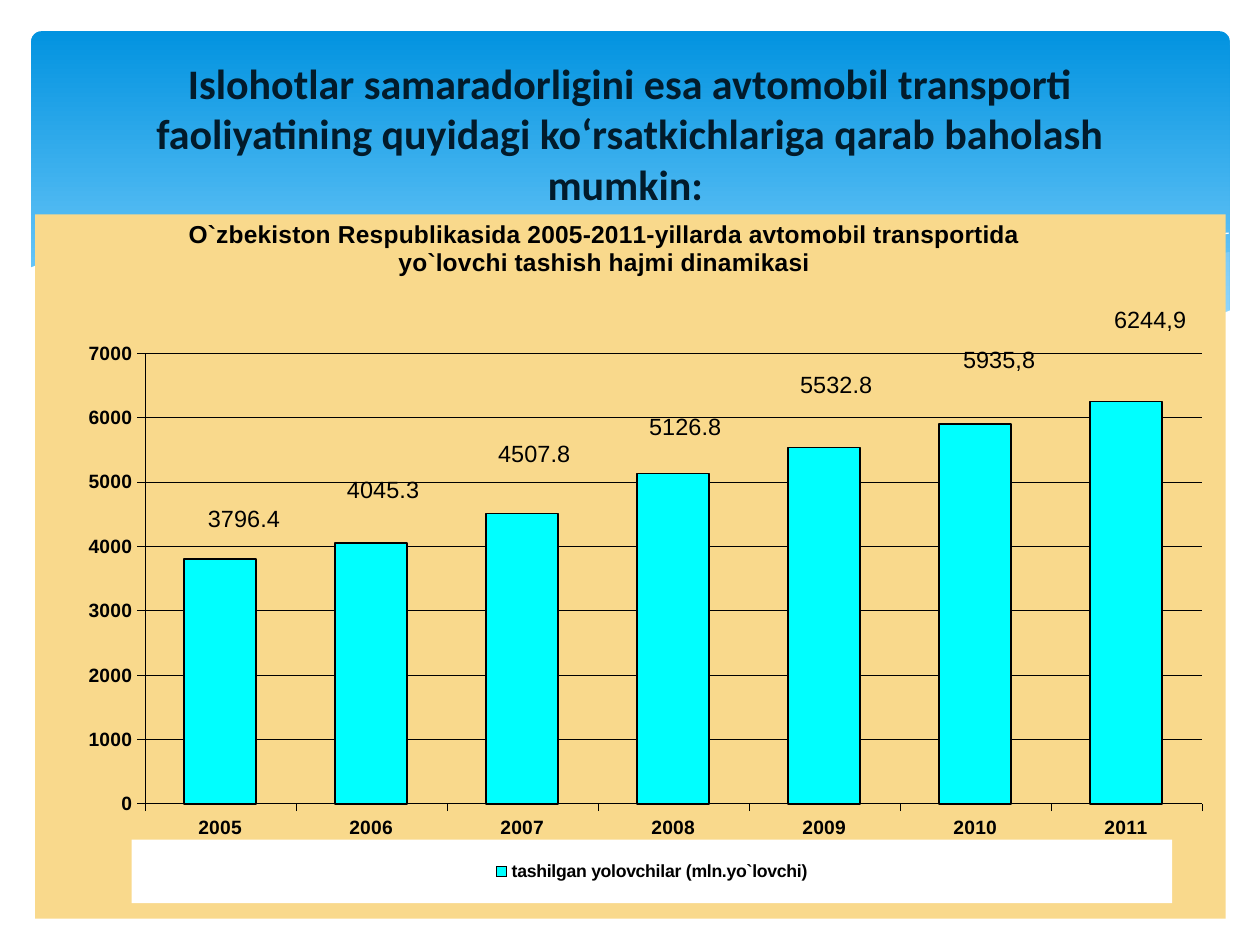
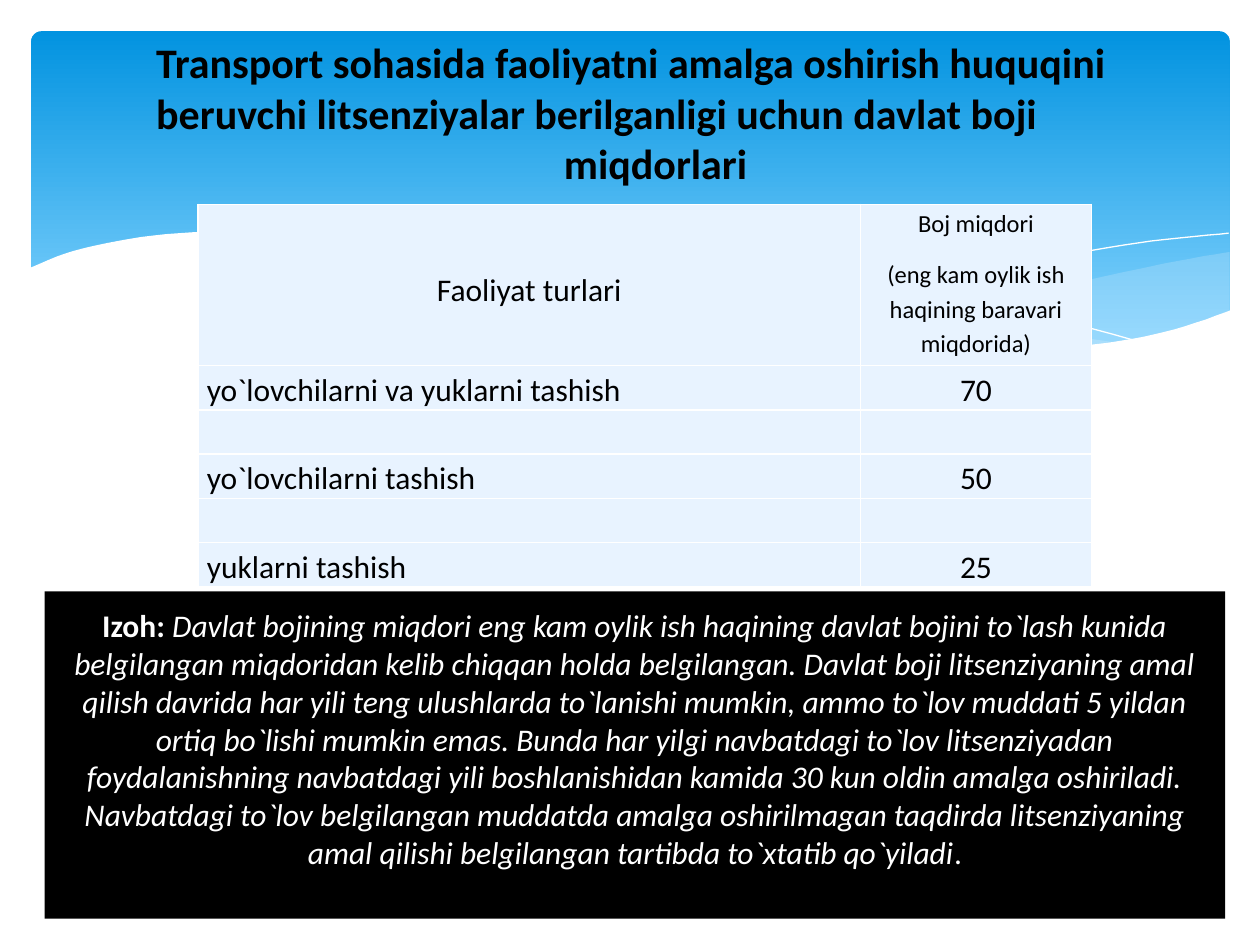
from dataclasses import dataclass
from typing import Any, NamedTuple

from pptx import Presentation
from pptx import util as u
from pptx.chart.data import CategoryChartData
from pptx.dml.color import RGBColor
from pptx.enum import chart as charts
from pptx.enum import shapes, text
from pptx.oxml import parse_xml
from pptx.oxml.ns import nsdecls, qn

SKY_TOP = RGBColor(0x02, 0x93, 0xE0)
SKY_BOTTOM = RGBColor(0x83, 0xD3, 0xFE)
MIST = RGBColor(0xC6, 0xE7, 0xFC)
WHITE = RGBColor(0xFF, 0xFF, 0xFF)
BLACK = RGBColor(0, 0, 0)
NAVY = RGBColor(0x02, 0x1B, 0x2B)
SAND = RGBColor(0xF9, 0xD9, 0x8C)
CYAN = RGBColor(0, 0xFF, 0xFF)
ICE = RGBColor(0xE8, 0xF3, 0xFF)

HEADING = {"name": "Calibri", "size": u.Pt(24), "bold": True}
BODY = {"name": "Calibri", "size": u.Pt(18), "bold": False}
CHART_FONT = {"name": "Arial", "bold": True}
POINT_FONT = {"name": "Arial", "size": u.Pt(13.4), "bold": False}

Curve = tuple[tuple[int, int], ...]


class Box(NamedTuple):
    left: float
    top: float
    width: float
    height: float

    def lengths(self) -> tuple:
        return tuple(u.Cm(value) for value in self)


@dataclass(frozen=True)
class Swoosh:
    curves: tuple[Curve, ...]
    filled: RGBColor | None = None
    opacity: int = 100


@dataclass(frozen=True)
class Bar:
    year: str
    value: float
    shift_x: float
    shift_y: float
    label: str = ""


SWOOSHES = (
    Swoosh((((2479, 508), (2375, 526), (2187, 566), (1979, 615), (1793, 653), (1679, 673)),
            ((1679, 673), (1791, 688), (1923, 701), (2068, 706), (2215, 696), (2339, 673),
             (2479, 627))), MIST, 29),
    Swoosh((((2268, 693), (2050, 660), (1793, 610), (1598, 564), (1410, 521), (1242, 493),
             (1067, 475), (917, 470), (726, 485)),
            ((726, 485), (919, 516), (1140, 564), (1346, 610), (1570, 655), (1765, 686),
             (1963, 704), (2129, 706), (2268, 693))), MIST, 40),
    Swoosh((((785, 495), (874, 483), (1019, 475), (1191, 480), (1412, 500), (1615, 528),
             (1847, 574), (2111, 638), (2304, 691)),)),
    Swoosh((((1557, 653), (1765, 597), (1971, 549), (2200, 505), (2347, 483), (2477, 470)),)),
    Swoosh((((2482, 625), (2388, 658), (2283, 683), (2159, 699), (2055, 704), (1933, 699),
             (1748, 681), (1532, 645), (1278, 592), (1062, 541), (864, 500), (688, 478),
             (490, 467), (335, 472), (216, 490), (132, 511), (58, 541)),
            ((58, 836), (2482, 836))), WHITE),
)

BARS = (
    Bar("2005", 3796.4, 0.02, -0.23),
    Bar("2006", 4045.3, 0.01, -0.26),
    Bar("2007", 4507.8, 0.01, -0.29),
    Bar("2008", 5126.8, 0.01, -0.3),
    Bar("2009", 5532.8, 0.01, -0.34),
    Bar("2010", 5899.3, 0.02, -0.36, "5935,8"),
    Bar("2011", 6244.9, 0.02, -0.4, "6244,9"),
)

FEES = (
    ("Faoliyat turlari", "Boj miqdori\n(eng kam oylik ish haqining baravari miqdorida)"),
    ("yo`lovchilarni va yuklarni tashish", "70"),
    ("", ""),
    ("yo`lovchilarni tashish", "50"),
    ("", ""),
    ("yuklarni tashish", "25"),
)

NOTE = (
    "Davlat bojining miqdori eng kam oylik ish haqining davlat bojini to`lash kunida "
    "belgilangan miqdoridan kelib chiqqan holda belgilangan. Davlat boji litsenziyaning amal "
    "qilish davrida har yili teng ulushlarda to`lanishi mumkin, ammo to`lov muddati 5 yildan "
    "ortiq bo`lishi mumkin emas. Bunda har yilgi navbatdagi to`lov litsenziyadan "
    "foydalanishning navbatdagi yili boshlanishidan kamida 30 kun oldin amalga oshiriladi. "
    "Navbatdagi to`lov belgilangan muddatda amalga oshirilmagan taqdirda litsenziyaning "
    "amal qilishi belgilangan tartibda to`xtatib qo`yiladi"
)


def assign(target: Any, values: dict) -> None:
    for name, value in values.items():
        setattr(target, name, value)


def style(font: Any, color: RGBColor, values: dict) -> None:
    assign(font, values)
    font.color.rgb = color


def paint(fill: Any, color: RGBColor) -> None:
    fill.solid()
    fill.fore_color.rgb = color


def outline(line: Any, color: RGBColor, points: float) -> None:
    line.color.rgb = color
    line.width = u.Pt(points)


def write(para: Any, words: str, color: RGBColor, values: dict) -> None:
    span = para.add_run()
    span.text = words
    style(span.font, color, values)


def smooth(nodes: Curve, steps: int = 5) -> list[tuple[int, int]]:
    padded = (nodes[0], *nodes, nodes[-1])
    points = [nodes[0]]
    for a, b, c, d in zip(padded, padded[1:], padded[2:], padded[3:]):
        for step in range(1, steps + 1):
            t = step / steps
            points.append(tuple(
                round(q + t / 2 * (r - p + t * (2 * p - 5 * q + 4 * r - s
                                               + t * (3 * q - p - 3 * r + s))))
                for p, q, r, s in zip(a, b, c, d)))
    return points


def draw_swoosh(page: Any, swoosh: Swoosh) -> Any:
    points = [point for curve in swoosh.curves for point in smooth(curve)]
    builder = page.shapes.build_freeform(*points[0], scale=u.Cm(0.01))
    builder.add_line_segments(points[1:], close=swoosh.filled is not None)
    shape = builder.convert_to_shape()
    if swoosh.filled is None:
        shape.fill.background()
        outline(shape.line, WHITE, 0)
        return shape
    paint(shape.fill, swoosh.filled)
    shape.line.fill.background()
    if swoosh.opacity < 100:
        tint = next(shape.element.iter(qn("a:srgbClr")))
        tint.append(parse_xml(f'<a:alpha {nsdecls("a")} val="{swoosh.opacity * 1000}"/>'))
    return shape


def draw_sky(page: Any) -> Any:
    sky = page.shapes.add_shape(shapes.MSO_SHAPE.ROUNDED_RECTANGLE,
                                *Box(0.63, 0.63, 24.16, 6.86).lengths())
    sky.adjustments[0] = 0.03
    sky.fill.gradient()
    sky.fill.gradient_angle = 270
    for stop, color, position in zip(sky.fill.gradient_stops, (SKY_TOP, SKY_BOTTOM), (0, 0.9)):
        stop.color.rgb = color
        stop.position = position
    sky.line.fill.background()
    return sky


def decorate_layout(page: Any) -> None:
    tree = page.slide_layout.shapes.element
    art = [draw_sky(page)] + [draw_swoosh(page, swoosh) for swoosh in SWOOSHES]
    for index, shape in enumerate(art):
        shape.shadow.inherit = False
        shape.element.nvSpPr.cNvPr.set("id", str(100 + index))
        tree.insert(2 + index, shape.element)


def place_title(page: Any, box: Box) -> Any:
    title = page.shapes.title
    assign(title, dict(zip(("left", "top", "width", "height"), box.lengths())))
    assign(title.text_frame, {"word_wrap": True, "auto_size": text.MSO_AUTO_SIZE.NONE,
                              "vertical_anchor": text.MSO_ANCHOR.MIDDLE})
    title.text_frame.paragraphs[0].alignment = text.PP_ALIGN.CENTER
    return title


def set_layout(parent: Any, index: int, inner: bool = False, **values: float) -> None:
    for old in parent.findall(qn("c:layout")):
        parent.remove(old)
    parts = '<c:layoutTarget val="inner"/>' if inner else ""
    if not parent.tag.endswith("dLbl"):
        parts += '<c:xMode val="edge"/><c:yMode val="edge"/>'
    parts += "".join(f'<c:{name} val="{value}"/>' for name, value in values.items())
    parent.insert(index, parse_xml(
        f'<c:layout {nsdecls("c")}><c:manualLayout>{parts}</c:manualLayout></c:layout>'))


def surface(color: RGBColor | None) -> Any:
    fill = (f'<a:solidFill><a:srgbClr val="{color}"/></a:solidFill>'
            if color is not None else "<a:noFill/>")
    return parse_xml(f'<c:spPr {nsdecls("c", "a")}>{fill}<a:ln><a:noFill/></a:ln></c:spPr>')


def hide_leader_lines(root: Any) -> None:
    labels = next(root.iter(qn("c:dLbls")))
    for leader in labels.findall(qn("c:showLeaderLines")):
        leader.set("val", "0")
    labels.append(parse_xml(
        f'<c:extLst {nsdecls("c")}><c:ext uri="{{CE6537A1-D6FC-4f65-9D91-7224C49458BB}}" '
        'xmlns:c15="http://schemas.microsoft.com/office/drawing/2012/chart">'
        '<c15:showLeaderLines val="0"/></c:ext></c:extLst>'))


def add_passenger_chart(page: Any) -> None:
    data = CategoryChartData()
    data.categories = [bar.year for bar in BARS]
    data.add_series("tashilgan yolovchilar (mln.yo`lovchi)", [bar.value for bar in BARS])
    chart = page.shapes.add_chart(charts.XL_CHART_TYPE.COLUMN_STACKED,
                                  *Box(0.71, 4.32, 24, 14.2).lengths(), data).chart
    style(chart.font, BLACK, {**CHART_FONT, "size": u.Pt(16)})
    root = chart.element
    root.find(qn("c:chart")).addnext(surface(SAND))

    write(chart.chart_title.text_frame.paragraphs[0],
          "O`zbekiston Respublikasida 2005-2011-yillarda avtomobil transportida "
          "yo`lovchi tashish hajmi dinamikasi", BLACK, {**CHART_FONT, "size": u.Pt(14)})
    chart.chart_title.include_in_layout = False
    set_layout(chart.chart_title.element, 1, x=0.125, y=0)

    for axis in (chart.category_axis, chart.value_axis):
        axis.major_tick_mark = charts.XL_TICK_MARK.OUTSIDE
        style(axis.tick_labels.font, BLACK, {**CHART_FONT, "size": u.Pt(11)})
        outline(axis.format.line, BLACK, 0.25)
    chart.category_axis.tick_label_position = charts.XL_TICK_LABEL_POSITION.LOW
    assign(chart.value_axis, {"minimum_scale": 0, "maximum_scale": 7000, "major_unit": 1000})
    outline(chart.value_axis.major_gridlines.format.line, BLACK, 0.25)

    plot = chart.plots[0]
    assign(plot, {"gap_width": 110, "overlap": 100, "vary_by_categories": False})
    series = plot.series[0]
    paint(series.format.fill, CYAN)
    outline(series.format.line, BLACK, 1)
    for index, bar in enumerate(BARS):
        label = series.points[index].data_label
        if bar.label:
            write(label.text_frame.paragraphs[0], bar.label, BLACK, POINT_FONT)
        else:
            style(label.font, BLACK, POINT_FONT)
        set_layout(label._get_or_add_dLbl(), 1, x=bar.shift_x, y=bar.shift_y)
    hide_leader_lines(root)

    area = root.find(f'{qn("c:chart")}/{qn("c:plotArea")}')
    set_layout(area, 0, inner=True, x=0.092, y=0.197, w=0.888, h=0.64)
    area.append(surface(None))

    chart.has_legend = True
    legend = chart.legend
    assign(legend, {"position": charts.XL_LEGEND_POSITION.BOTTOM, "include_in_layout": False})
    style(legend.font, BLACK, {**CHART_FONT, "size": u.Pt(10.1)})
    frame = root.find(f'{qn("c:chart")}/{qn("c:legend")}')
    set_layout(frame, 1, x=0.081, y=0.888, w=0.874, h=0.09)
    frame.find(qn("c:txPr")).addprevious(surface(WHITE))


def border_cell(cell: Any) -> None:
    properties = cell._tc.get_or_add_tcPr()
    for side in "LRTB":
        properties.append(parse_xml(
            f'<a:ln{side} {nsdecls("a")} w="12700"><a:solidFill><a:srgbClr val="{WHITE}"/>'
            f"</a:solidFill></a:ln{side}>"))


def add_fee_table(page: Any) -> None:
    table = page.shapes.add_table(len(FEES), 2, *Box(3.99, 4.12, 18.01, 7.7).lengths()).table
    assign(table, {"first_row": False, "horz_banding": False})
    for column, width in zip(table.columns, (13.36, 4.65)):
        column.width = u.Cm(width)
    for row_index, row in enumerate(table.rows):
        row.height = u.Cm(0.89 if row_index else 3.25)
        for column_index, cell in enumerate(row.cells):
            top = 1.24 if row_index == column_index == 0 else 0
            assign(cell, {"margin_left": u.Cm(0.18), "margin_right": u.Cm(0.18),
                          "margin_top": u.Cm(top), "margin_bottom": 0})
            border_cell(cell)
            paint(cell.fill, ICE)
            words = FEES[row_index][column_index]
            centred = column_index == 1 or row_index == 0
            size = 14 if column_index == 1 and row_index == 0 else 18
            for index, line in enumerate(words.split("\n") if words else ()):
                frame = cell.text_frame
                para = frame.add_paragraph() if index else frame.paragraphs[0]
                assign(para, {"line_spacing": 1.15, "space_after": u.Pt(10),
                              "alignment": text.PP_ALIGN.CENTER if centred
                              else text.PP_ALIGN.LEFT})
                write(para, line, BLACK, {**BODY, "size": u.Pt(size)})


def add_fee_heading(page: Any) -> None:
    frame = page.shapes.add_textbox(*Box(2.9, 0.58, 20.22, 5.64).lengths()).text_frame
    assign(frame, {"word_wrap": True, "margin_top": u.Cm(0.16)})
    lines = (("Transport sohasida faoliyatni amalga oshirish huquqini", 0),
             ("beruvchi litsenziyalar berilganligi uchun davlat boji", 0),
             ("miqdorlari", 8.22))
    for index, (words, indent) in enumerate(lines):
        para = frame.add_paragraph() if index else frame.paragraphs[0]
        para.alignment = text.PP_ALIGN.JUSTIFY
        para._p.get_or_add_pPr().set("marL", str(u.Cm(indent)))
        write(para, words, BLACK, HEADING)


def build_passenger_page(page: Any) -> None:
    title = place_title(page, Box(1.27, 0.94, 22.86, 3.48))
    write(title.text_frame.paragraphs[0],
          "Islohotlar samaradorligini esa avtomobil transporti faoliyatining quyidagi "
          "ko‘rsatkichlariga qarab baholash mumkin: ", NAVY, HEADING)
    add_passenger_chart(page)


def build_fee_page(page: Any) -> None:
    title = place_title(page, Box(0.9, 11.92, 23.8, 6.6))
    paint(title.fill, BLACK)
    title.text_frame.margin_bottom = u.Cm(0.79)
    para = title.text_frame.paragraphs[0]
    write(para, "Izoh: ", WHITE, {**BODY, "bold": True})
    write(para, NOTE, WHITE, {**BODY, "italic": True})
    write(para, ".", WHITE, BODY)
    add_fee_table(page)
    add_fee_heading(page)


def main() -> None:
    deck = Presentation()
    assign(deck, {"slide_width": u.Cm(25.4), "slide_height": u.Cm(19.05)})
    layout = deck.slide_layouts.get_by_name("Title Only")
    pages = [deck.slides.add_slide(layout) for _ in range(2)]
    decorate_layout(pages[0])
    build_passenger_page(pages[0])
    build_fee_page(pages[1])
    deck.save("out.pptx")


if __name__ == "__main__":
    main()
